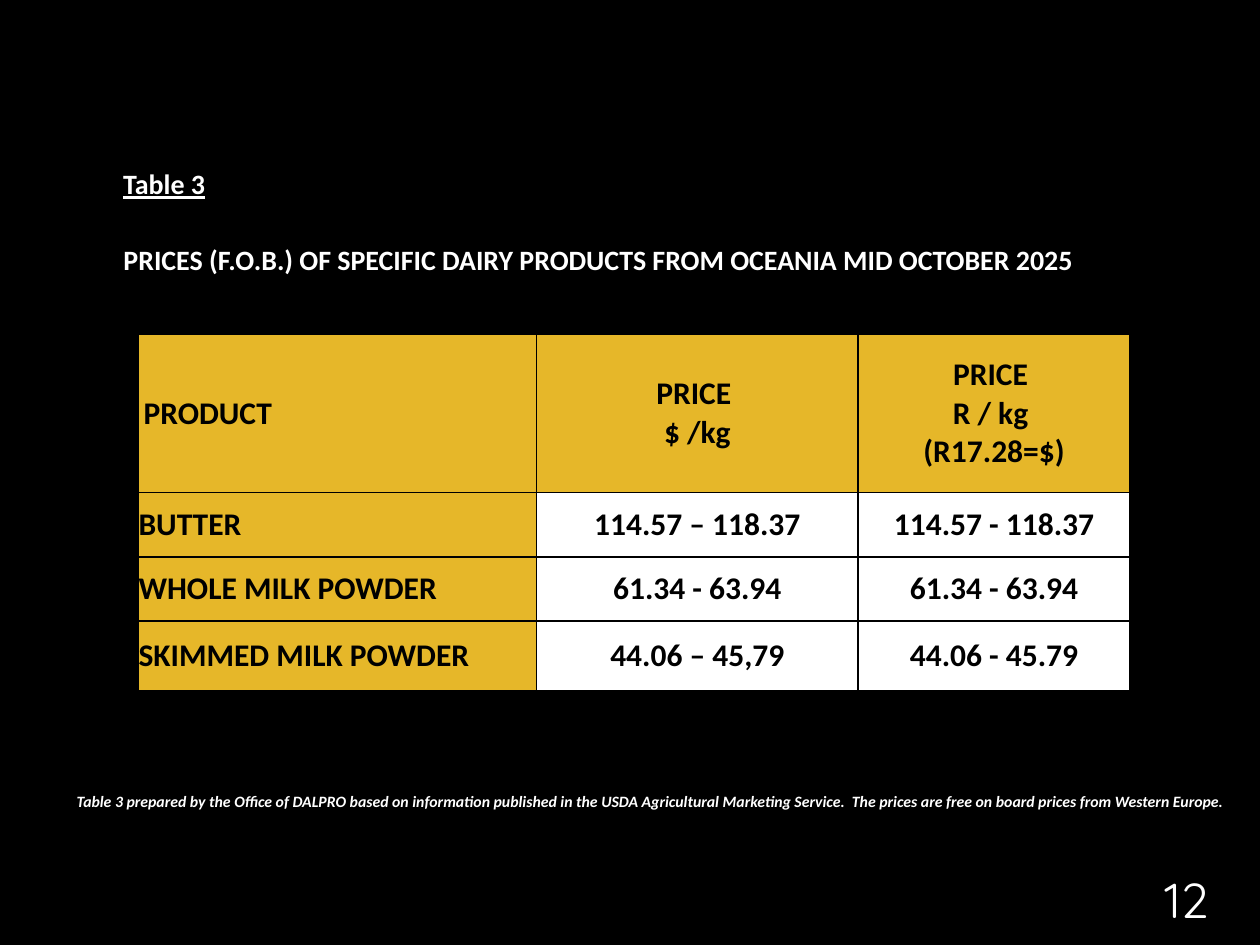
from lxml.etree import SubElement
from pptx import Presentation
from pptx.dml.color import RGBColor
from pptx.enum.text import MSO_ANCHOR, PP_ALIGN
from pptx.oxml.ns import qn
from pptx.util import Inches, Pt

BLACK = RGBColor(0, 0, 0)
WHITE = RGBColor(255, 255, 255)
GOLD = RGBColor(0xE6, 0xB7, 0x29)

TITLE = "PRICES (F.O.B.) OF SPECIFIC DAIRY PRODUCTS FROM OCEANIA MID OCTOBER 2025"
NOTE = ("Table 3 prepared by the Office of DALPRO based on information published in the "
        "USDA Agricultural Marketing Service.  The prices are free on board prices from "
        "Western Europe.")
ROWS = [
    ["PRODUCT ", "PRICE \n$ /kg", "PRICE \nR / kg \n(R17.28=$)"],
    ["BUTTER ", "114.57 – 118.37", "114.57 - 118.37"],
    ["WHOLE MILK POWDER ", "61.34 - 63.94", "61.34 - 63.94"],
    ["SKIMMED MILK POWDER ", "44.06 – 45,79", "44.06 - 45.79"],
]
WIDTHS = [3.16, 2.55, 2.16]
HEIGHTS = [1.26, 0.51, 0.51, 0.55]


def write(frame, text, size, color, align=PP_ALIGN.LEFT, face="Calibri",
          bold=True, italic=False, line=False):
    """Fill a text frame, one paragraph per line of text."""
    for i, part in enumerate(text.split("\n")):
        para = frame.add_paragraph() if i else frame.paragraphs[0]
        para.alignment = align
        run = para.add_run()
        run.text = part
        font = run.font
        font.name, font.size, font.color.rgb = face, Pt(size), color
        font.bold, font.italic, font.underline = bold, italic, line


def place(shape, box, anchor):
    shape.left, shape.top, shape.width, shape.height = map(Inches, box)
    frame = shape.text_frame
    frame.word_wrap = True
    frame.vertical_anchor = anchor
    return frame


def add_text(slide, box, anchor, *args, **style):
    shape = slide.shapes.add_textbox(0, 0, 0, 0)
    write(place(shape, box, anchor), *args, **style)


def add_border(cell):
    props = cell._tc.get_or_add_tcPr()
    for i, side in enumerate(("lnL", "lnR", "lnT", "lnB")):
        line = props.makeelement(qn(f"a:{side}"), {"w": str(Pt(1))})
        fill = SubElement(line, qn("a:solidFill"))
        SubElement(fill, qn("a:srgbClr"), val=str(BLACK))
        props.insert(i, line)


def add_prices(slide):
    table = slide.shapes.add_table(
        len(ROWS), len(WIDTHS), Inches(1.1), Inches(2.65),
        Inches(sum(WIDTHS)), Inches(sum(HEIGHTS))).table
    for col, width in zip(table.columns, WIDTHS):
        col.width = Inches(width)
    for r, (row, height) in enumerate(zip(ROWS, HEIGHTS)):
        table.rows[r].height = Inches(height)
        for c, text in enumerate(row):
            cell = table.cell(r, c)
            cell.margin_left = cell.margin_right = Inches(0 if r else 0.04)
            cell.margin_top = cell.margin_bottom = 0
            cell.vertical_anchor = MSO_ANCHOR.MIDDLE
            cell.fill.solid()
            cell.fill.fore_color.rgb = WHITE if r and c else GOLD
            add_border(cell)
            align = PP_ALIGN.CENTER if c else PP_ALIGN.JUSTIFY
            write(cell.text_frame, text, 18, BLACK, align)


def main():
    deck = Presentation()
    deck.slide_width, deck.slide_height = Inches(10), Inches(7.5)
    slide = deck.slides.add_slide(deck.slide_layouts[5])
    slide.background.fill.solid()
    slide.background.fill.fore_color.rgb = BLACK

    title = place(slide.shapes.title, (0.88, 1.87, 8.54, 0.37), MSO_ANCHOR.MIDDLE)
    write(title, TITLE, 16, WHITE)
    add_text(slide, (0.88, 1.27, 0.96, 0.37), MSO_ANCHOR.TOP,
             "Table 3", 16, WHITE, line=True)
    add_prices(slide)
    add_text(slide, (0.51, 6.23, 9.42, 0.25), MSO_ANCHOR.MIDDLE,
             NOTE, 9, WHITE, italic=True)
    add_text(slide, (9.07, 6.58, 0.69, 0.84), MSO_ANCHOR.BOTTOM,
             "12", 28, WHITE, PP_ALIGN.CENTER, "Quicksand", bold=False)
    deck.save("out.pptx")


if __name__ == "__main__":
    main()
